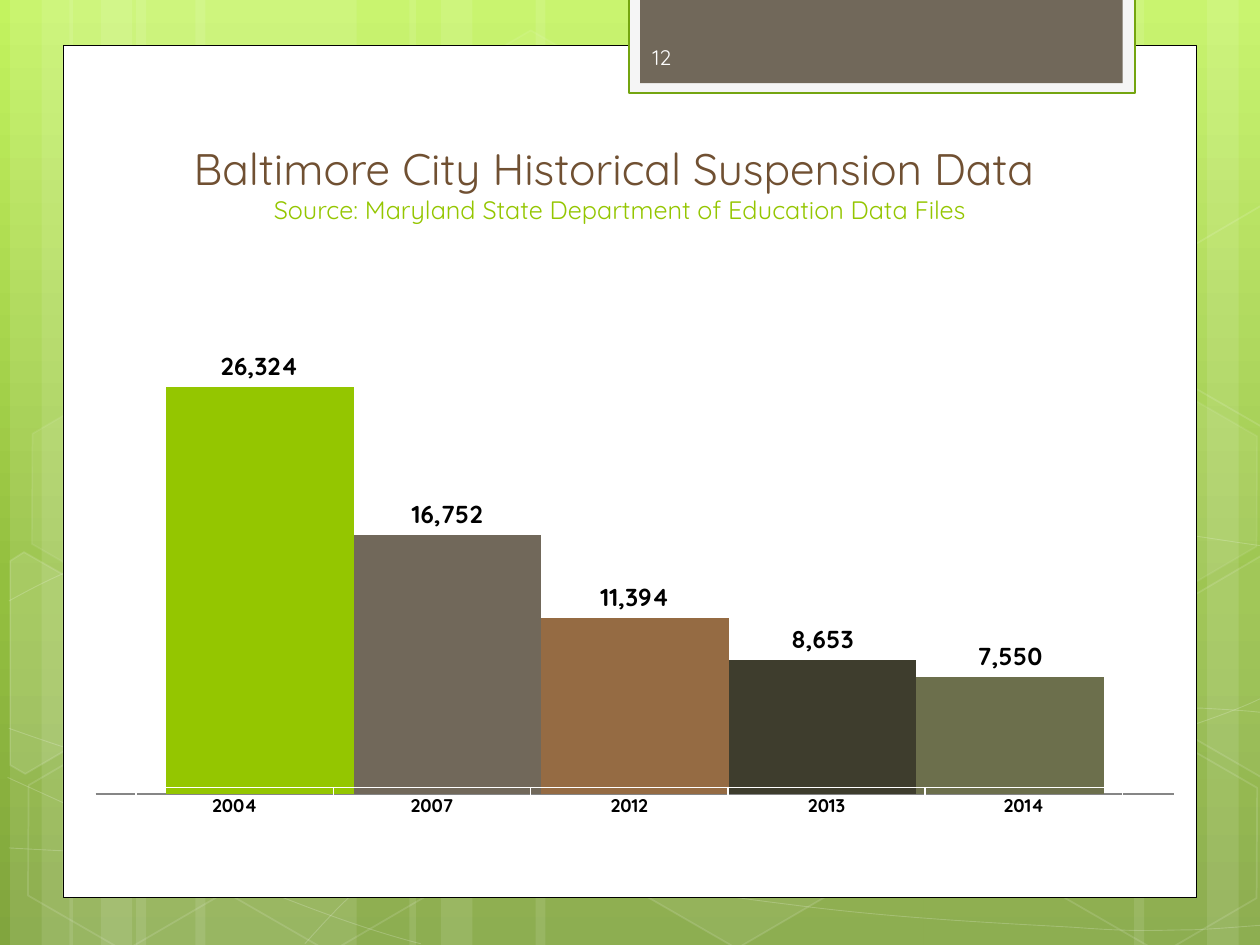
from copy import deepcopy
from math import cos, radians, sin
from lxml.etree import SubElement
from pptx import Presentation
from pptx.chart.data import CategoryChartData
from pptx.dml.color import RGBColor
from pptx.enum.chart import XL_CHART_TYPE, XL_LABEL_POSITION, XL_TICK_LABEL_POSITION, XL_TICK_MARK
from pptx.enum.shapes import MSO_SHAPE
from pptx.enum.text import MSO_ANCHOR, PP_ALIGN
from pptx.oxml import parse_xml
from pptx.oxml.ns import nsdecls, qn
from pptx.util import Inches, Pt

FONT = "Quicksand"
TILT = 30
SUSPENSIONS = [
    ("2004", 26324, "94C600"),
    ("2007", 16752, "71685A"),
    ("2012", 11394, "956B43"),
    ("2013", 8653, "3E3D2D"),
    ("2014", 7550, "6C6F4C"),
]
STRIPES = [
    (1.08, 1.75, 0), (0.08, 0.5, 0), (0.33, 0.83, 0), (1.55, 1.75, 0), (0.55, 0.5, 0), (0.8, 0.83, 0),
    (7.33, 1.75, 180), (9.58, 0.5, 180), (9, 0.83, 180), (4.25, 3.08, 0), (3.25, 0.5, 0), (3.5, 0.83, 0),
]
WAVES = [
    [(0.07, 6.73), (0.61, 6.76), (1.15, 6.79), (1.9, 6.78), (2.65, 6.77), (3.58, 6.75), (4.58, 6.65),
     (5.58, 6.55), (7, 6.36), (7.92, 6.17), (8.83, 5.98), (9.77, 5.68), (10.07, 5.51)],
    [(0.07, 4.77), (0.36, 4.61), (0.65, 4.46), (1.21, 4.31), (1.78, 4.16), (2.59, 3.94), (3.47, 3.87),
     (4.36, 3.8), (5.44, 3.79), (6.54, 3.87), (7.64, 3.95), (9.47, 4.26), (10.07, 4.34)],
    [(0.06, 6.17), (1.27, 6.72), (2.47, 7.27), (3.34, 7.49)],
    [(0.07, 5.78), (0.38, 5.89), (0.7, 6), (1.28, 6.16), (1.86, 6.31), (2.73, 6.56), (3.57, 6.73),
     (4.4, 6.9), (5.45, 7.08), (6.28, 7.18), (7.11, 7.29), (8, 7.33), (8.53, 7.36),
     (9.05, 7.4), (9.19, 7.38), (9.45, 7.38), (9.71, 7.37), (9.89, 7.35), (10.07, 7.34)],
    [(2.42, 7.49), (2.6, 7.29), (2.78, 7.09), (3.02, 6.91), (3.26, 6.73), (3.6, 6.53), (3.88, 6.39),
     (4.16, 6.25), (4.33, 6.19), (4.7, 6.09), (5.06, 5.99), (5.73, 5.85), (6.08, 5.78),
     (6.44, 5.71), (6.49, 5.71), (6.8, 5.69), (7.11, 5.66), (7.6, 5.63), (7.94, 5.62),
     (8.29, 5.61), (8.86, 5.62), (8.86, 5.62), (9.08, 5.62), (9.31, 5.62), (9.53, 5.62),
     (9.71, 5.63), (9.88, 5.64), (9.97, 5.65), (10.06, 5.66), (10.03, 5.65), (10.06, 5.66)],
]
HEXAGONS = [
    (3.34, 0.36, 4, 8), (4.97, 5.89, 6, 12), (0.11, 5.91, 0, 12), (0.14, 3.12, 7, 8), (1.74, 5.92, 0, 12),
    (7.53, 4.53, 10, 12), (8.34, 5.93, 0, 12), (8.34, 3.14, 7, 8),
]
CUT_HEXAGONS = [
    ((0.36, 5.35), [(0.08, 4.45), (0.19, 4.38), (0.96, 4.82), (0.95, 5.7), (0.2, 6.14), (0.08, 6.07)], 10),
    ((9.85, 5.2), [(9.26, 4.85), (10.01, 4.41), (10.09, 4.46), (10.09, 6.13), (10.02, 6.17), (9.26, 5.73)], 4),
    ((9.85, 2.41), [(9.26, 2.07), (10.01, 1.63), (10.1, 1.68), (10.09, 3.35), (10.02, 3.39), (9.26, 2.95)], 0),
]


def colour(value):
    return RGBColor.from_string(value)


def apply(target, formats):
    for name, value in formats.items():
        setattr(target, name, value)


def style_shape(shape, fill=None, line=None, width=1, fill_alpha=100, line_alpha=100):
    shape.shadow.inherit = False
    for part, value, alpha in ((shape.fill, fill, fill_alpha), (shape.line.fill, line, line_alpha)):
        if value is None or alpha == 0:
            part.background()
            continue
        part.solid()
        part.fore_color.rgb = colour(value)
        if alpha < 100:
            SubElement(part.fore_color._xFill[0], qn("a:alpha"), val=str(alpha * 1000))
    if line:
        shape.line.width = Pt(width)


def add_block(page, box, kind=MSO_SHAPE.RECTANGLE, **style):
    shape = page.shapes.add_shape(kind, *map(Inches, box))
    style_shape(shape, **style)
    return shape


def add_outline(page, points, close, **style):
    corners = [(Inches(x), Inches(y)) for x, y in points]
    builder = page.shapes.build_freeform(*corners[0])
    builder.add_line_segments(corners[1:], close=close)
    shape = builder.convert_to_shape()
    style_shape(shape, **style)
    return shape


def bend(shape):
    segments = list(shape.element.iter(qn("a:lnTo")))
    for start in range(0, len(segments), 3):
        first, *others = segments[start:start + 3]
        first.tag = qn("a:cubicBezTo")
        for segment in others:
            first.append(segment[0])
            segment.getparent().remove(segment)


def turn_back(points, centre):
    across, down = centre
    cosine, sine = cos(radians(TILT)), sin(radians(TILT))
    return [(across + (x - across) * cosine + (y - down) * sine,
             down - (x - across) * sine + (y - down) * cosine) for x, y in points]


def add_backdrop(page, box):
    left, top, _, height = box
    fill = page.background.fill
    fill.gradient()
    fill.gradient_angle = 270
    first = next(page.element.iter(qn("a:gs")))
    first.addnext(deepcopy(first))
    for stop, (position, value) in zip(fill.gradient_stops, [(0, "C3F35F"), (0.62, "93BF3F"), (1, "81A53E")]):
        stop.position = position
        stop.color.rgb = colour(value)
    for offset, width, rotation in STRIPES:
        stripe = add_block(page, (left + offset, top, width, height), fill="FFFFFF", fill_alpha=10)
        stripe.rotation = rotation

    def shift(points):
        return [(left + x, top + y) for x, y in points]

    for wave in WAVES:
        bend(add_outline(page, shift(wave), False, line="FFFFFF", width=0.5, line_alpha=20))
    for x, y, fill_alpha, line_alpha in HEXAGONS:
        hexagon = add_block(page, (left + x, top + y, 1.75, 1.52), MSO_SHAPE.HEXAGON, fill="FFFFFF",
                            line="FFFFFF", fill_alpha=fill_alpha, line_alpha=line_alpha)
        hexagon.adjustments[0] = 0.285
        hexagon.rotation = TILT
    for centre, points, fill_alpha in CUT_HEXAGONS:
        hexagon = add_outline(page, shift(turn_back(points, centre)), True, fill="FFFFFF", line="FFFFFF",
                              fill_alpha=fill_alpha, line_alpha=12)
        hexagon.rotation = TILT


def add_span(para, text, size, value):
    span = para.add_run()
    span.text = text
    apply(span.font, {"name": FONT, "size": Pt(size)})
    span.font.color.rgb = colour(value)


def add_number_tab(page, box):
    left, top, width, height = box
    add_block(page, box, fill="F5F5F5", line="74A510", width=1.25)
    add_block(page, (left + 0.09, top, width - 0.19, height - 0.08), fill="71685A")
    label = page.shapes.add_textbox(*map(Inches, (left + 0.09, top + 0.27, 1.46, 0.4)))
    apply(label.text_frame, {"word_wrap": True, "vertical_anchor": MSO_ANCHOR.MIDDLE})
    add_span(label.text_frame.paragraphs[0], "12", 12, "FEFEFE")


def add_title(page, box):
    title = page.shapes.title
    apply(title, dict(zip(("left", "top", "width", "height"), map(Inches, box))))
    title.element.getparent().append(title.element)
    apply(title.text_frame, {"word_wrap": True, "vertical_anchor": MSO_ANCHOR.BOTTOM})
    para = title.text_frame.paragraphs[0]
    para.alignment = PP_ALIGN.CENTER
    add_span(para, "Baltimore City Historical Suspension Data ", 25.2, "705032")
    para.add_line_break()
    add_span(para, "Source: Maryland State Department of Education Data Files", 14.4, "94C600")


def add_suspension_chart(page, box):
    data = CategoryChartData(number_format="#,##0")
    data.categories = ["1"]
    for number, (_, count, _) in enumerate(SUSPENSIONS, 1):
        data.add_series(f"Series {number}", [count])
    chart = page.shapes.add_chart(XL_CHART_TYPE.COLUMN_CLUSTERED, *map(Inches, box), data).chart
    apply(chart, {"has_legend": False, "has_title": False})
    apply(chart.font, {"name": FONT, "size": Pt(18)})
    chart.font.color.rgb = colour("000000")
    apply(chart.value_axis, {"minimum_scale": 0, "maximum_scale": 30000, "visible": False,
                             "has_major_gridlines": False})
    apply(chart.category_axis, {"tick_label_position": XL_TICK_LABEL_POSITION.NONE,
                                "major_tick_mark": XL_TICK_MARK.NONE})
    chart.category_axis.format.line.color.rgb = colour("868686")
    plot = chart.plots[0]
    apply(plot, {"gap_width": 75, "overlap": 0, "vary_by_categories": False})
    for series, (_, _, value) in zip(plot.series, SUSPENSIONS):
        series.format.fill.solid()
        series.format.fill.fore_color.rgb = colour(value)
        labels = series.data_labels
        apply(labels, {"show_value": True, "number_format": "#,##0", "number_format_is_linked": False,
                       "position": XL_LABEL_POSITION.OUTSIDE_END})
        apply(labels.font, {"name": FONT, "size": Pt(14), "bold": True})
        labels.font.color.rgb = colour("000000")
    area = chart.element.find(".//" + qn("c:plotArea"))
    for old in area.findall(qn("c:layout")):
        area.remove(old)
    settings = {"layoutTarget": "inner", "xMode": "edge", "yMode": "edge",
                "x": 0.02, "y": 0.02, "w": 0.96, "h": 0.96}
    entries = "".join(f'<c:{name} val="{value}"/>' for name, value in settings.items())
    area.insert(0, parse_xml(f'<c:layout {nsdecls("c")}><c:manualLayout>{entries}</c:manualLayout></c:layout>'))


def add_year_table(page, box):
    table = page.shapes.add_table(1, len(SUSPENSIONS), *map(Inches, box)).table
    apply(table, {"first_row": False, "horz_banding": False})
    for cell, (year, _, _) in zip(table.iter_cells(), SUSPENSIONS):
        cell.vertical_anchor = MSO_ANCHOR.MIDDLE
        para = cell.text_frame.paragraphs[0]
        para.alignment = PP_ALIGN.CENTER
        add_span(para, year, 10.5, "000000")
        para.runs[0].font.bold = True
        properties = cell._tc.get_or_add_tcPr()
        for side, width in (("L", 1), ("R", 1), ("T", 1), ("B", 3)):
            border = SubElement(properties, qn(f"a:ln{side}"), w=str(Pt(width)))
            SubElement(SubElement(border, qn("a:solidFill")), qn("a:srgbClr"), val="FFFFFF")
        cell.fill.background()


def main():
    deck = Presentation()
    apply(deck, {"slide_width": Inches(10), "slide_height": Inches(7.5)})
    page = deck.slides.add_slide(deck.slide_layouts[5])
    add_backdrop(page, (0, 0, 10, 7.5))
    add_block(page, (0.5, 0.36, 9, 6.76), fill="FFFFFF", line="000000", width=0.5)
    add_number_tab(page, (4.99, -0.02, 4.02, 0.76))
    add_title(page, (1.08, 0.75, 7.68, 1.08))
    add_suspension_chart(page, (0.58, 2.54, 8.92, 3.84))
    add_year_table(page, (1.08, 6.25, 7.83, 0.28))
    deck.save("out.pptx")


if __name__ == "__main__":
    main()
